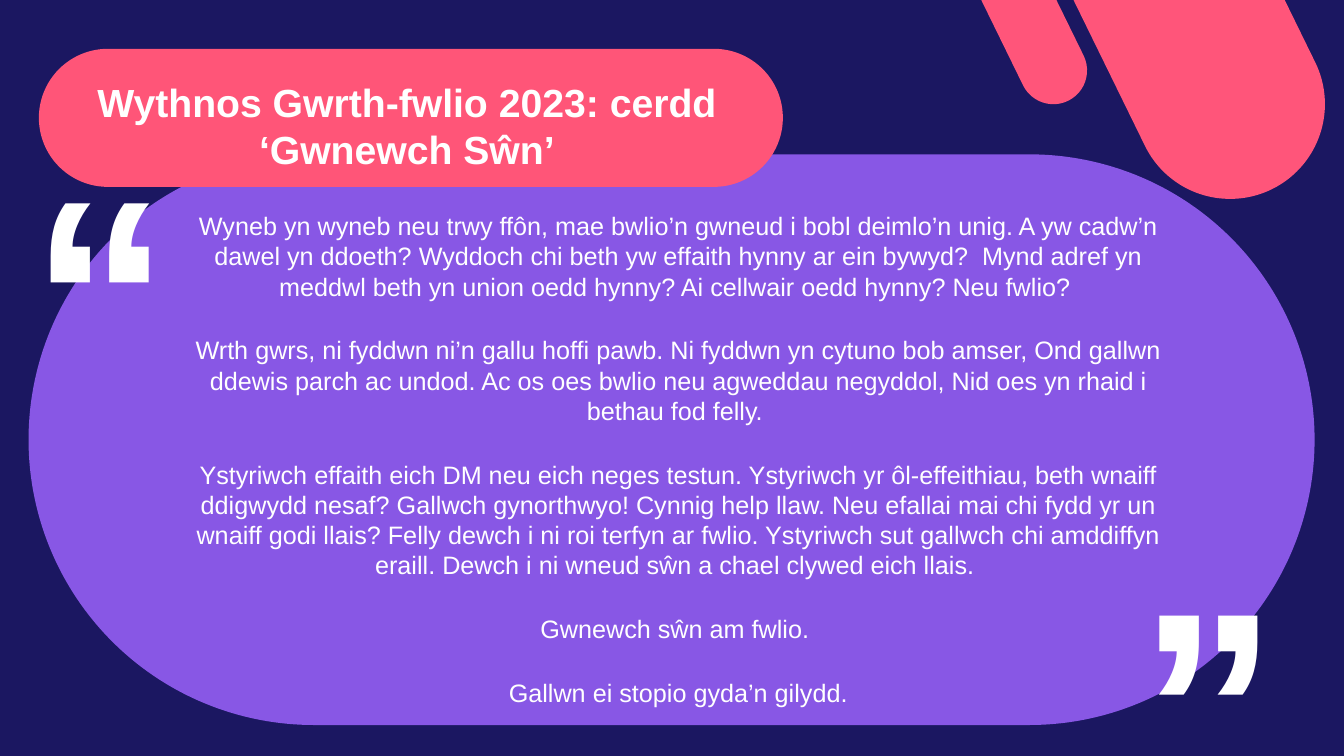
import pptx
import pptx.util
import pptx.dml.color
import pptx.enum.shapes
import pptx.enum.text
from pptx.util import Cm, Pt

RGB = pptx.dml.color.RGBColor.from_string
ALIGN = pptx.enum.text.PP_ALIGN

THEME = {
    "font": "Arial",
    "navy": RGB("1B1761"),
    "purple": RGB("8857E5"),
    "coral": RGB("FF557A"),
    "title_coral": RGB("FF5578"),
    "white": RGB("FFFFFF"),
    "title": Pt(28),
    "body": Pt(18),
    "quote": Pt(200),
}

POEM = [
    "Wyneb yn wyneb neu trwy ffôn, mae bwlio’n gwneud i bobl deimlo’n unig. "
    "A yw cadw’n dawel yn ddoeth? Wyddoch chi beth yw effaith hynny ar ein bywyd?  "
    "Mynd adref yn meddwl beth yn union oedd hynny? Ai cellwair oedd hynny? Neu fwlio? ",
    "Wrth gwrs, ni fyddwn ni’n gallu hoffi pawb. Ni fyddwn yn cytuno bob amser, "
    "Ond gallwn ddewis parch ac undod. Ac os oes bwlio neu agweddau negyddol, "
    "Nid oes yn rhaid i bethau fod felly. ",
    "Ystyriwch effaith eich DM neu eich neges testun. Ystyriwch yr ôl-effeithiau, "
    "beth wnaiff ddigwydd nesaf? Gallwch gynorthwyo! Cynnig help llaw. "
    "Neu efallai mai chi fydd yr un wnaiff godi llais? Felly dewch i ni roi terfyn "
    "ar fwlio. Ystyriwch sut gallwch chi amddiffyn eraill. Dewch i ni wneud sŵn "
    "a chael clywed eich llais. ",
    "Gwnewch sŵn am fwlio. ",
    "Gallwn ei stopio gyda’n gilydd.",
]


def add_pill(s, box, color, rotation=0):
    """Add a rectangle with fully rounded ends."""
    sp = s.shapes.add_shape(pptx.enum.shapes.MSO_SHAPE.ROUNDED_RECTANGLE, *map(Cm, box))
    sp.adjustments[0] = 0.5
    sp.rotation = rotation
    sp.shadow.inherit = False
    sp.fill.solid()
    sp.fill.fore_color.rgb = color
    sp.line.fill.background()


def write_text(sp, paragraphs, size, bold=False, paragraph_format=None):
    tf = sp.text_frame
    tf.word_wrap = True
    tf.auto_size = pptx.enum.text.MSO_AUTO_SIZE.NONE
    tf.vertical_anchor = pptx.enum.text.MSO_ANCHOR.TOP
    for i, text in enumerate(paragraphs):
        p = tf.add_paragraph() if i else tf.paragraphs[0]
        for name, value in (paragraph_format or {}).items():
            setattr(p, name, value)
        r = p.add_run()
        r.text = text
        for name, value in {"name": THEME["font"], "size": size, "bold": bold}.items():
            setattr(r.font, name, value)
        r.font.color.rgb = THEME["white"]


prs = pptx.Presentation()
prs.slide_width, prs.slide_height = Cm(33.87), Cm(19.05)
s = prs.slides.add_slide(prs.slide_layouts[5])
s.background.fill.solid()
s.background.fill.fore_color.rgb = THEME["navy"]

# Poem panel and corner stripes
add_pill(s, (0.72, 3.89, 32.41, 14.38), THEME["purple"])
for stripe in [(26.8, -7.57, 4.78, 13), (23.95, -6.6, 1.7, 9.63)]:
    add_pill(s, stripe, THEME["coral"], 153.9)

# Poem
poem = s.shapes.add_textbox(Cm(4.09), Cm(5.18), Cm(26.01), Cm(12.9))
write_text(poem, POEM, THEME["body"], paragraph_format={
    "alignment": ALIGN.CENTER, "space_before": Pt(12), "space_after": Pt(12)})

# Opening quote mark, and the same mark turned round to close
for left, top, rotation in [(0.53, 2.82, 0), (27.69, 11.02, 180)]:
    mark = s.shapes.add_textbox(Cm(left), Cm(top), Cm(4.78), Cm(8.81))
    mark.rotation = rotation
    write_text(mark, ["“"], THEME["quote"], bold=True)

# Title, brought in front of its pill
add_pill(s, (0.98, 1.23, 18.75, 3.48), THEME["title_coral"])
title = s.shapes.title
title.element.getparent().append(title.element)
for name, value in {"left": 0.97, "top": 1.85, "width": 18.57, "height": 2.64}.items():
    setattr(title, name, Cm(value))
write_text(title, ["Wythnos Gwrth-fwlio 2023: cerdd ‘Gwnewch Sŵn’"], THEME["title"],
           bold=True, paragraph_format={"alignment": ALIGN.CENTER})

prs.save("out.pptx")
